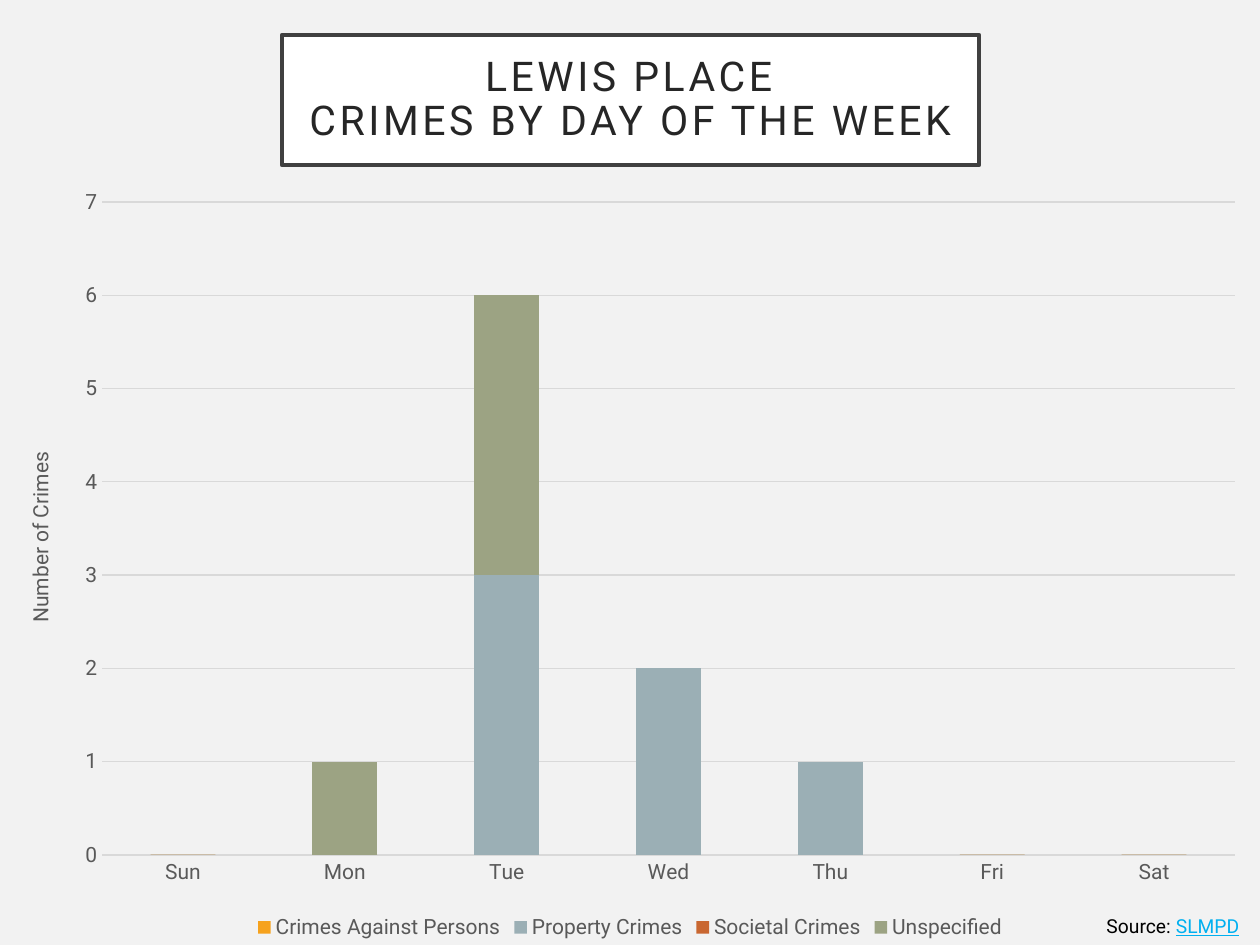
import pptx
import pptx.chart.data
import pptx.dml.color
import pptx.enum.chart
import pptx.enum.shapes
import pptx.enum.text
import pptx.oxml
import pptx.oxml.ns
import pptx.util

PX = 914400 / 126

THEME = {
    "font": "Roboto",
    "background": "F2F2F2",
    "panel": "FFFFFF",
    "frame": "404040",
    "heading": "262626",
    "body": "000000",
    "link": "00B0F0",
    "label": "595959",
    "grid": "D9D9D9",
    "heading_size": 23.4,
    "source_size": 11,
    "chart_size": 12,
}

DAYS = ["Sun", "Mon", "Tue", "Wed", "Thu", "Fri", "Sat"]
CRIMES = [
    ("Crimes Against Persons", "F6A21D", [0, 0, 0, 0, 0, 0, 0]),
    ("Property Crimes", "9BAFB5", [0, 0, 3, 2, 1, 0, 0]),
    ("Societal Crimes", "C96731", [0, 0, 0, 0, 0, 0, 0]),
    ("Unspecified", "9CA383", [0, 1, 3, 0, 0, 0, 0]),
]


def px(*lengths):
    return [pptx.util.Emu(round(length * PX)) for length in lengths]


def rgb(role):
    return pptx.dml.color.RGBColor.from_string(THEME.get(role, role))


def apply(target, formats):
    for attribute, value in formats.items():
        setattr(target, attribute, value)


def fill_solid(fill, color):
    fill.solid()
    fill.fore_color.rgb = rgb(color)


def draw_line(line, color, points):
    fill_solid(line.fill, color)
    line.width = pptx.util.Pt(points)


def style_font(font, color, size, **formats):
    apply(font, {"name": THEME["font"], "size": pptx.util.Pt(THEME[size]), **formats})
    font.color.rgb = rgb(color)


def add_heading(slide, box, lines):
    panel = slide.shapes.add_shape(pptx.enum.shapes.MSO_SHAPE.RECTANGLE, *px(*box))
    panel.shadow.inherit = False
    fill_solid(panel.fill, "panel")
    draw_line(panel.line, "frame", 2.5)
    inset = pptx.util.Inches(0.2)
    apply(panel.text_frame, {
        "word_wrap": True,
        "vertical_anchor": pptx.enum.text.MSO_ANCHOR.MIDDLE,
        "margin_left": inset, "margin_right": inset,
        "margin_top": inset, "margin_bottom": inset,
    })
    heading = panel.text_frame.paragraphs[0]
    apply(heading, {"alignment": pptx.enum.text.PP_ALIGN.CENTER, "line_spacing": 0.9})
    for number, line in enumerate(lines):
        if number:
            heading.add_line_break()
        run = heading.add_run()
        run.text = line
        style_font(run.font, "heading", "heading_size")
        run.font._element.set("spc", "200")


def add_source(slide, box, label, agency):
    note = slide.shapes.add_textbox(*px(*box))
    note.text_frame.word_wrap = True
    source = note.text_frame.paragraphs[0]
    source.alignment = pptx.enum.text.PP_ALIGN.CENTER
    for words, color, underline in [(label, "body", False), (agency, "link", True)]:
        run = source.add_run()
        run.text = words
        style_font(run.font, color, "source_size", underline=underline)


def place_plot(chart, box, plot_box):
    """Fix the inner plot area, given in px from the corner of the chart."""
    plot_area = chart._chartSpace.chart.plotArea
    for layout in plot_area.findall(pptx.oxml.ns.qn("c:layout")):
        plot_area.remove(layout)
    width, height = box[2:]
    parts = zip("xywh", plot_box, (width, height, width, height))
    values = "".join(f'<c:{key} val="{part / whole:.4f}"/>' for key, part, whole in parts)
    plot_area.insert(0, pptx.oxml.parse_xml(
        f'<c:layout {pptx.oxml.ns.nsdecls("c")}><c:manualLayout>'
        '<c:layoutTarget val="inner"/><c:xMode val="edge"/><c:yMode val="edge"/>'
        f'{values}</c:manualLayout></c:layout>'))


def add_crime_chart(slide, box, plot_box):
    crime_data = pptx.chart.data.CategoryChartData(number_format="General")
    crime_data.categories = DAYS
    for name, _, counts in CRIMES:
        crime_data.add_series(name, counts)
    chart = slide.shapes.add_chart(
        pptx.enum.chart.XL_CHART_TYPE.COLUMN_STACKED, *px(*box), crime_data).chart
    apply(chart, {"has_title": False, "has_legend": True})
    style_font(chart.font, "body", "chart_size")
    apply(chart.legend, {
        "position": pptx.enum.chart.XL_LEGEND_POSITION.BOTTOM,
        "include_in_layout": False,
    })
    style_font(chart.legend.font, "label", "chart_size")

    columns = chart.plots[0]
    apply(columns, {"gap_width": 150, "overlap": 100, "vary_by_categories": False})
    for series, (_, color, _) in zip(columns.series, CRIMES):
        fill_solid(series.format.fill, color)

    days, counts = chart.category_axis, chart.value_axis
    for axis in (days, counts):
        no_tick = pptx.enum.chart.XL_TICK_MARK.NONE
        apply(axis, {"major_tick_mark": no_tick, "minor_tick_mark": no_tick})
        style_font(axis.tick_labels.font, "label", "chart_size")
    draw_line(days.format.line, "grid", 0.75)
    apply(counts, {"minimum_scale": 0, "maximum_scale": 7, "major_unit": 1,
                   "has_major_gridlines": True, "has_title": True})
    counts.format.line.fill.background()
    draw_line(counts.major_gridlines.format.line, "grid", 0.75)
    counts_title = counts.axis_title.text_frame
    counts_title.text = "Number of Crimes"
    style_font(counts_title.paragraphs[0].runs[0].font, "label", "chart_size", bold=False)
    counts_title._txBody.bodyPr.set("rot", "-5400000")
    counts_title._txBody.bodyPr.set("vert", "horz")
    place_plot(chart, box, plot_box)


def main():
    deck = pptx.Presentation()
    deck.slide_width, deck.slide_height = px(1260, 945)
    slide = deck.slides.add_slide(deck.slide_layouts[6])
    fill_solid(slide.background.fill, "background")
    add_heading(slide, (282, 35, 697, 130), ["LEWIS PLACE", "CRIMES BY DAY OF THE WEEK"])
    add_source(slide, (1091, 908, 164, 37), "Source: ", "SLMPD")
    add_crime_chart(slide, (0, 175, 1260, 770), (102, 27, 1133, 653))
    deck.save("out.pptx")


if __name__ == "__main__":
    main()
